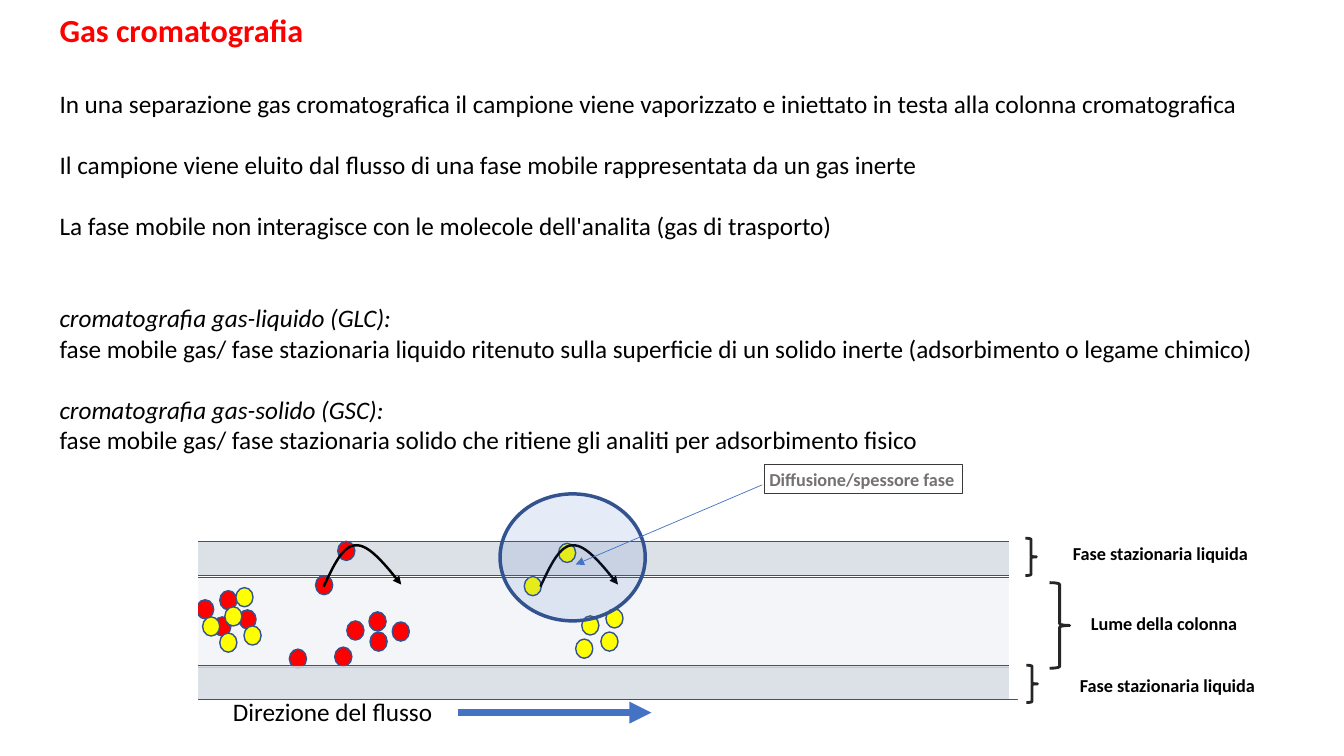
from lxml.etree import SubElement
from pptx import Presentation
from pptx.dml.color import RGBColor
from pptx.enum.shapes import MSO_CONNECTOR, MSO_SHAPE as Preset
from pptx.enum.text import MSO_ANCHOR, MSO_AUTO_SIZE, PP_ALIGN
from pptx.oxml.ns import qn
from pptx.util import Inches, Pt

COLORS = {
    "red": "FF0000", "yellow": "FFFF00", "black": "000000", "white": "FFFFFF",
    "film": "D6DCE5", "outline": "32538F", "blue": "4472C4",
    "brace": "262626", "frame": "3B3838", "gray": "767171",
}
COLORS = {name: RGBColor.from_string(value) for name, value in COLORS.items()}
FONT = "Calibri"
INSET = Inches(0.05)

deck = Presentation()
deck.slide_width, deck.slide_height = Inches(13.33), Inches(7.5)
page = deck.slides.add_slide(deck.slide_layouts[1])


def add_figure(preset, place, fill=None, opacity=100, line=None, width=1):
    """Add a preset shape at (left, top, width, height) in inches."""
    shape = page.shapes.add_shape(preset, *map(Inches, place))
    shape.shadow.inherit = False
    if fill:
        shape.fill.solid()
        shape.fill.fore_color.rgb = COLORS[fill]
        if opacity < 100:
            color = shape._element.spPr.find(qn("a:solidFill"))[0]
            SubElement(color, qn("a:alpha"), val=str(opacity * 1000))
    else:
        shape.fill.background()
    if line:
        shape.line.color.rgb = COLORS[line]
        shape.line.width = Pt(width)
    else:
        shape.line.fill.background()
    return shape


def format_text(shape, text, size, color="black", bold=True):
    """Write one unwrapped, left-aligned line into a shape."""
    frame = shape.text_frame
    frame.word_wrap = False
    frame.margin_left = frame.margin_right = INSET
    frame.margin_top = frame.margin_bottom = INSET
    para = frame.paragraphs[0]
    para.text = text
    para.alignment = PP_ALIGN.LEFT
    para.font.name, para.font.size, para.font.bold = FONT, Pt(size), bold
    para.font.color.rgb = COLORS[color]


# Title and body
title = page.shapes.title
title.left, title.top, title.width, title.height = map(Inches, (0.54, 0.05, 12.31, 0.5))
format_text(title, "Gas cromatografia", 23, "red")
title.text_frame.vertical_anchor = MSO_ANCHOR.TOP
title.text_frame.auto_size = MSO_AUTO_SIZE.NONE

body = page.placeholders[1]
body.left, body.top, body.width, body.height = map(Inches, (0.54, 0.83, 12.31, 3.88))
frame = body.text_frame
frame.word_wrap = True
frame.auto_size = MSO_AUTO_SIZE.NONE
frame.vertical_anchor = MSO_ANCHOR.TOP
frame.margin_left = frame.margin_right = frame.margin_top = frame.margin_bottom = INSET

# (text, space before in points, italic)
statements = [
    ("In una separazione gas cromatografica il campione viene vaporizzato e "
     "iniettato in testa alla colonna cromatografica", 0, False),
    ("Il campione viene eluito dal flusso di una fase mobile rappresentata da un gas inerte", 22, False),
    ("La fase mobile non interagisce con le molecole dell'analita (gas di trasporto)", 22, False),
    ("cromatografia gas-liquido (GLC):", 44, True),
    ("fase mobile gas/ fase stazionaria liquido ritenuto sulla superficie di un "
     "solido inerte (adsorbimento o legame chimico)", 0, False),
    ("cromatografia gas-solido (GSC):", 22, True),
    ("fase mobile gas/ fase stazionaria solido che ritiene gli analiti per adsorbimento fisico", 0, False),
]
for index, (text, space, italic) in enumerate(statements):
    para = frame.paragraphs[0] if index == 0 else frame.add_paragraph()
    para.text = text
    properties = para._p.get_or_add_pPr()
    properties.set("marL", "0")
    properties.set("indent", "0")
    SubElement(properties, qn("a:buNone"))
    para.alignment = PP_ALIGN.LEFT
    para.line_spacing = 1.0
    para.space_before, para.space_after = Pt(space), Pt(0)
    para.font.name, para.font.size, para.font.italic = FONT, Pt(18), italic
    para.font.color.rgb = COLORS["black"]

# Column: lumen, molecules, stationary films, then molecules inside the film
add_figure(Preset.RECTANGLE, (1.88, 5.73, 8.19, 0.89), "film", 26, "outline")
lumen_molecules = {
    "red": [(1.95, 5.95), (2.12, 6.12), (2.18, 5.86), (2.87, 6.44), (2.37, 6.05),
            (3.44, 6.16), (3.66, 6.07), (3.67, 6.27), (3.89, 6.17), (3.13, 5.71),
            (3.32, 6.42)],
    "yellow": [(2.01, 6.12), (2.18, 6.28), (2.23, 6.02), (2.34, 5.83), (2.42, 6.21),
               (5.71, 6.34), (5.96, 6.27), (5.77, 6.11), (6.01, 6.04), (5.2, 5.72)],
}
film_molecules = {"red": [(3.35, 5.37)], "yellow": [(5.54, 5.39)]}
films = [(1.86, 5.37), (1.9, 6.6)]
for molecules, layers in ((lumen_molecules, films), (film_molecules, [])):
    for color, spots in molecules.items():
        for left, top in spots:
            add_figure(Preset.OVAL, (left, top, 0.17, 0.19), color, line="outline")
    for left, top in layers:
        add_figure(Preset.RECTANGLE, (left, top, 8.19, 0.34), "film", 85, "outline")

# Curved paths of the molecules through the film, drawn as two Bezier arcs
arrows = []
arcs = [((0, 0.41), (0.1, 0.2), (0.19, 0), (0.32, 0)),
        ((0.32, 0), (0.45, -0.01), (0.61, 0.19), (0.77, 0.39))]
STEPS = 16
for left, top in ((3.21, 5.41), (5.36, 5.41)):
    points = []
    for arc in arcs:
        for step in range(STEPS + 1):
            t = step / STEPS
            weights = ((1 - t) ** 3, 3 * t * (1 - t) ** 2, 3 * t * t * (1 - t), t ** 3)
            x, y = (sum(w * point[axis] for w, point in zip(weights, arc)) for axis in (0, 1))
            points.append((Inches(left + x), Inches(top + y)))
    builder = page.shapes.build_freeform(*points[0])
    builder.add_line_segments(points[1:], close=False)
    curve = builder.convert_to_shape()
    curve.fill.background()
    arrows.append((curve, "black", 1.75))

# White ends that trim the column
for left, top in ((1.68, 5.34), (10.01, 5.27)):
    add_figure(Preset.RECTANGLE, (left, top, 0.28, 1.66), "white", line="white")

# Braces and labels
for place in ((10.17, 5.34, 0.11, 0.37), (10.41, 5.78, 0.2, 0.85), (10.18, 6.6, 0.11, 0.37)):
    add_figure(Preset.RIGHT_BRACE, place, line="brace", width=2)
labels = [
    ("Fase stazionaria liquida", (10.59, 5.33, 1.86, 0.28), 13, True),
    ("Fase stazionaria liquida", (10.66, 6.64, 1.86, 0.28), 13, True),
    ("Lume della colonna", (10.77, 6.02, 1.57, 0.28), 13, True),
    ("Direzione del flusso", (2.26, 6.86, 2.09, 0.36), 18, False),
]
for text, place, size, bold in labels:
    format_text(page.shapes.add_textbox(*map(Inches, place)), text, size, bold=bold)

# Magnifier, callout and straight arrows
add_figure(Preset.OVAL, (4.96, 4.9, 1.44, 1.26), "blue", 13, "outline", 2.5)
callout = add_figure(Preset.RECTANGLE, (7.58, 4.61, 1.97, 0.29), "white", line="frame", width=0.75)
format_text(callout, "Diffusione/spessore fase", 13, "gray")
for ends, width in (((4.54, 7.07, 6.46, 7.07), 5.25), ((7.56, 4.81, 5.71, 5.6), 0.5)):
    connector = page.shapes.add_connector(MSO_CONNECTOR.STRAIGHT, *map(Inches, ends))
    arrows.append((connector, "blue", width))

for arrow, color, width in arrows:
    arrow.line.color.rgb = COLORS[color]
    arrow.line.width = Pt(width)
    properties = arrow._element.spPr
    SubElement(properties.find(qn("a:ln")), qn("a:tailEnd"), type="triangle")
    SubElement(properties, qn("a:effectLst"))

deck.save("out.pptx")
